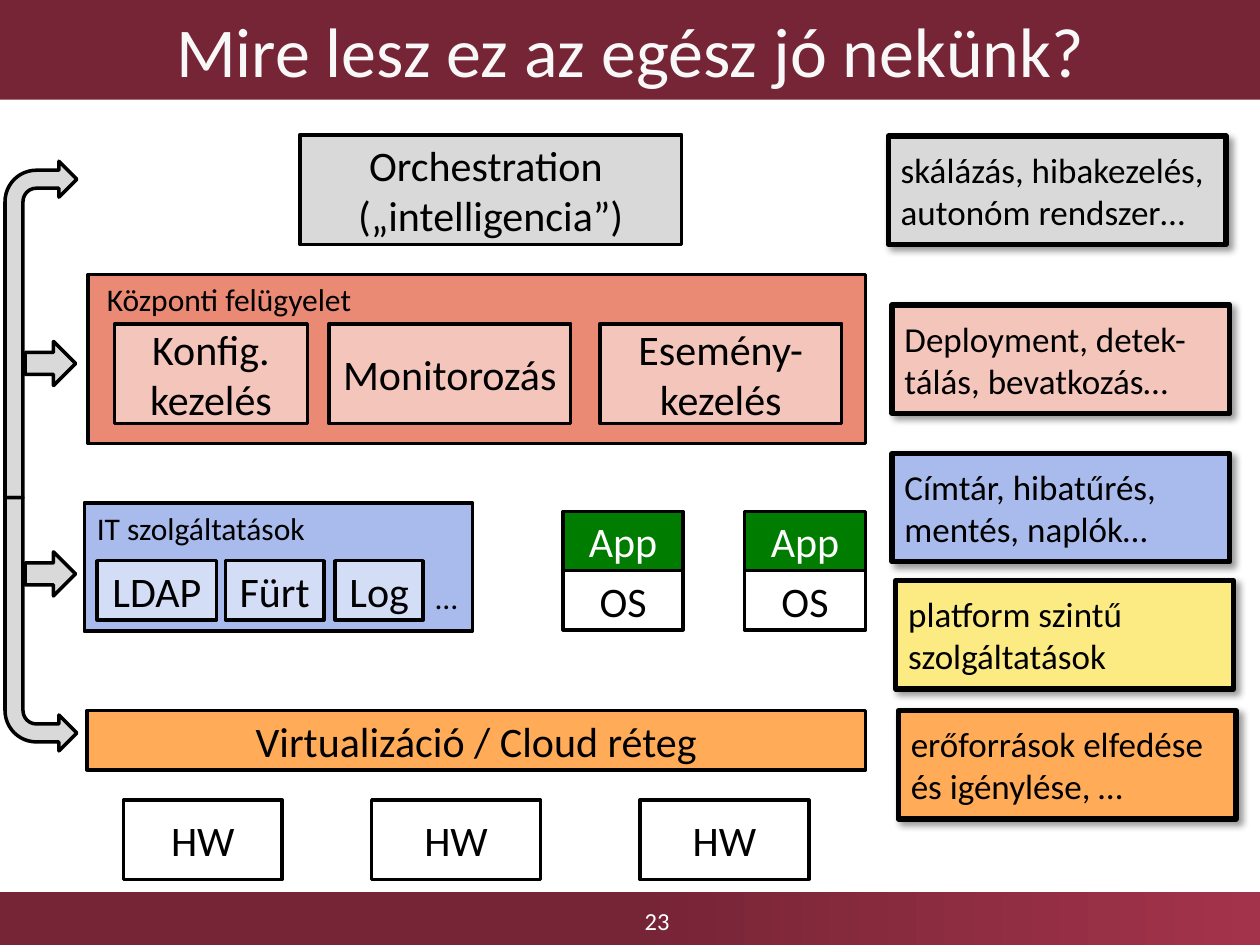
from lxml.etree import SubElement
from pptx import Presentation
from pptx.dml.color import RGBColor
from pptx.enum.shapes import MSO_SHAPE
from pptx.enum.text import MSO_ANCHOR, PP_ALIGN
from pptx.oxml.ns import qn
from pptx.util import Inches, Pt

THEME = {
    "font": "Calibri",
    "sizes": {"title": 40, "box": 24, "note": 20, "label": 18, "page": 14},
    "colors": {
        "black": "000000", "white": "FFFFFF", "title": "F8F8F8",
        "wine": "762536", "light wine": "A3334B",
        "gray": "D9D9D9", "red": "EA8A75", "pink": "F4C5BA",
        "blue": "A9BBED", "pale blue": "D4DDF6",
        "orange": "FFAB57", "yellow": "FBEB82", "green": "007D00",
    },
}

TITLE = "Mire lesz ez az egész jó nekünk?"
PAGE_NUMBER = "23"
PANELS = [
    (0.7, 2.18, 6.17, 1.34, "red"),
    (0.67, 3.99, 3.08, 1.02, "blue"),
]
LABELS = [
    ("Központi felügyelet", 0.75, 2.17, 2.6),
    ("IT szolgáltatások", 0.67, 3.99, 2.06),
    ("…", 3.36, 4.54, 0.39),
]
LAYERS = [
    ("Orchestration \n(„intelligencia”)", 2.38, 1.07, 3.03, 0.87, "gray"),
    ("Virtualizáció / Cloud réteg", 0.69, 5.64, 6.18, 0.47, "orange"),
]
BOX_ROWS = [
    (2.57, 0.79, "pink", [("Konfig. kezelés", 0.91, 1.53), ("Monitorozás", 2.61, 1.92),
                          ("Esemény-kezelés", 4.76, 1.92)]),
    (4.45, 0.47, "pale blue", [("LDAP", 0.77, 0.95), ("Fürt", 1.79, 0.78), ("Log", 2.66, 0.7)]),
    (6.35, 0.63, "white", [("HW", 0.98, 1.26), ("HW", 2.95, 1.34), ("HW", 5.08, 1.34)]),
    (4.53, 0.47, None, [("OS", 4.47, 0.95), ("OS", 5.91, 0.96)]),
    (4.06, 0.47, "green", [("App", 4.47, 0.95), ("App", 5.91, 0.96)]),
]
NOTES = [
    ("skálázás, hibakezelés, \nautonóm rendszer…", 7.05, 1.08, "gray"),
    ("Deployment, detek-tálás, bevatkozás…", 7.08, 2.42, "pink"),
    ("Címtár, hibatűrés, mentés, naplók…", 7.08, 3.6, "blue"),
    ("platform szintű\nszolgáltatások", 7.11, 4.61, "yellow"),
    ("erőforrások elfedése és igénylése, …", 7.13, 5.64, "orange"),
]
NOTE_SIZE = (2.68, 0.86)
BENT_ARROWS = [(1.28, 2.67, False), (3.95, 2.01, True)]
RIGHT_ARROW_TOPS = [2.71, 4.38]


def color(name):
    return RGBColor.from_string(THEME["colors"][name])


def write(shape, text, size, font_color="black", align=PP_ALIGN.CENTER, anchor=MSO_ANCHOR.MIDDLE):
    frame = shape.text_frame
    frame.word_wrap = True
    frame.vertical_anchor = anchor
    paragraph = frame.paragraphs[0]
    paragraph.text = text
    paragraph.alignment = align
    paragraph.font.name = THEME["font"]
    paragraph.font.size = Pt(THEME["sizes"][size])
    paragraph.font.color.rgb = color(font_color)


def add_shape(slide, left, top, width, height, fill, line=2, kind=MSO_SHAPE.RECTANGLE):
    shape = slide.shapes.add_shape(kind, Inches(left), Inches(top), Inches(width), Inches(height))
    shape.shadow.inherit = False
    if fill:
        shape.fill.solid()
        shape.fill.fore_color.rgb = color(fill)
    else:
        shape.fill.background()
    if line:
        shape.line.color.rgb = color("black")
        shape.line.width = Pt(line)
    else:
        shape.line.fill.background()
    return shape


def add_text(slide, text, left, top, width, height, size, **style):
    box = slide.shapes.add_textbox(Inches(left), Inches(top), Inches(width), Inches(height))
    write(box, text, size, **style)


def add_shadow(shape):
    effects = shape.element.spPr.find(qn("a:effectLst"))
    shadow = SubElement(effects, qn("a:outerShdw"), blurRad=str(Pt(4)), dist=str(Pt(3)),
                        dir=str(45 * 60000), algn="tl", rotWithShape="0")
    shade = SubElement(shadow, qn("a:srgbClr"), val=THEME["colors"]["black"])
    SubElement(shade, qn("a:alpha"), val="40000")


def add_frame(slide):
    footer = add_shape(slide, 0, 7.08, 10, 0.42, "wine", line=None)
    footer.fill.gradient()
    footer.fill.gradient_angle = 0
    for stop, position, name in zip(footer.fill.gradient_stops, (0.5, 1), ("wine", "light wine")):
        stop.position = position
        stop.color.rgb = color(name)
    add_text(slide, PAGE_NUMBER, 3.59, 7.11, 3.25, 0.39, "page", font_color="white")
    write(add_shape(slide, 0, 0, 10, 0.79, "wine", line=None), TITLE, "title", "title")


def add_architecture(slide):
    for panel in PANELS:
        add_shape(slide, *panel)
    for text, left, top, width in LABELS:
        add_text(slide, text, left, top, width, 0.4, "label",
                 align=PP_ALIGN.LEFT, anchor=MSO_ANCHOR.TOP)
    for text, *place in LAYERS:
        write(add_shape(slide, *place), text, "box")
    for top, height, fill, boxes in BOX_ROWS:
        font_color = "white" if fill == "green" else "black"
        for text, left, width in boxes:
            write(add_shape(slide, left, top, width, height, fill), text, "box", font_color)


def add_arrows(slide):
    for top, height, flipped in BENT_ARROWS:
        arrow = add_shape(slide, 0.04, top, 0.57, height, "gray", kind=MSO_SHAPE.BENT_ARROW)
        if flipped:
            arrow.element.spPr.find(qn("a:xfrm")).set("flipV", "1")
    for top in RIGHT_ARROW_TOPS:
        add_shape(slide, 0.2, top, 0.4, 0.35, "gray", kind=MSO_SHAPE.RIGHT_ARROW)


def add_notes(slide):
    for text, left, top, fill in NOTES:
        note = add_shape(slide, left, top, *NOTE_SIZE, fill, line=3)
        add_shadow(note)
        write(note, text, "note", align=PP_ALIGN.LEFT)


def main():
    presentation = Presentation()
    presentation.slide_width = Inches(10)
    presentation.slide_height = Inches(7.5)
    slide = presentation.slides.add_slide(presentation.slide_layouts[6])
    add_frame(slide)
    add_architecture(slide)
    add_arrows(slide)
    add_notes(slide)
    presentation.save("out.pptx")


if __name__ == "__main__":
    main()
